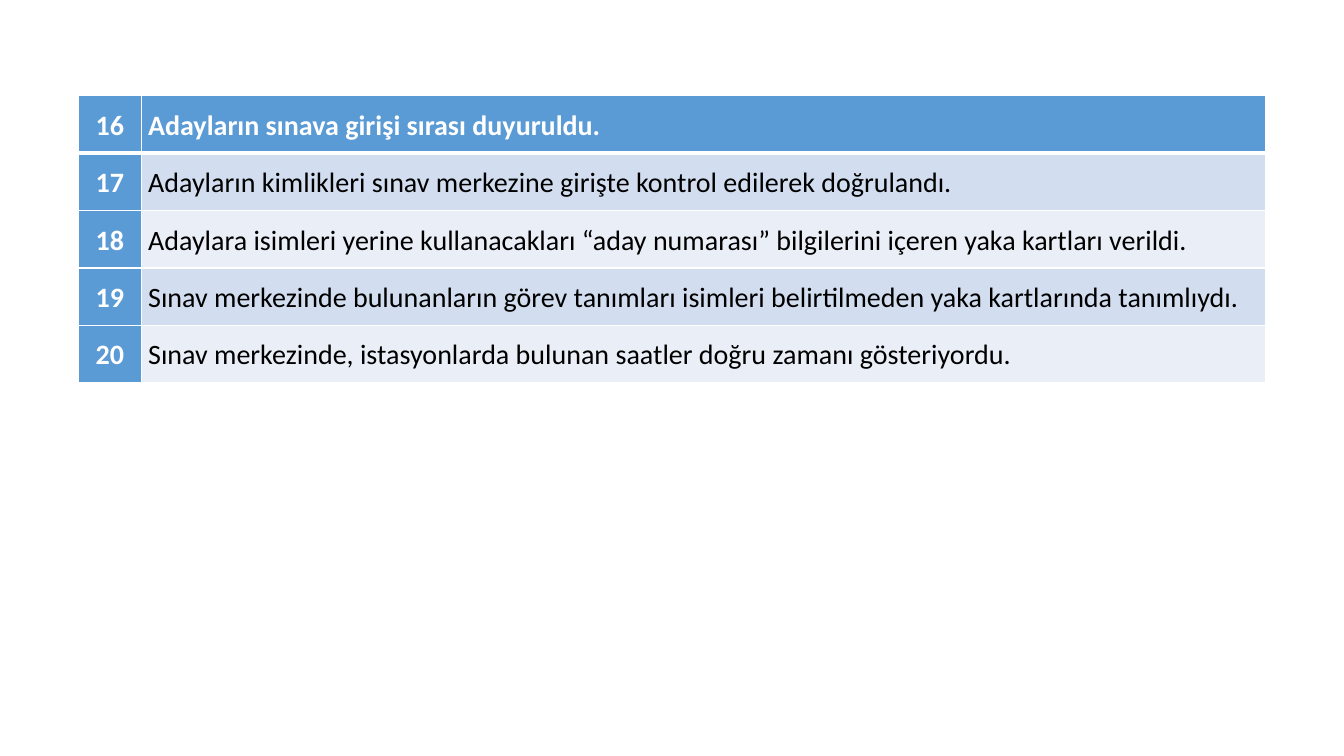
from dataclasses import dataclass

from lxml.etree import SubElement
from pptx import Presentation
from pptx.dml.color import RGBColor as Color
from pptx.enum.text import MSO_ANCHOR as Anchor, PP_ALIGN as Align
from pptx.oxml.ns import qn
from pptx.util import Inches, Pt


@dataclass(frozen=True)
class Theme:
    font: str = "Calibri"
    size: int = 20
    white: str = "FFFFFF"
    black: str = "000000"
    accent: str = "5B9BD5"
    bands: tuple = ("D2DEEF", "EAEFF7")
    border: int = 1
    header_border: int = 3


FIRST_NUMBER = 16
CHECKLIST = [
    "Adayların sınava girişi sırası duyuruldu.",
    "Adayların kimlikleri sınav merkezine girişte kontrol edilerek doğrulandı.",
    "Adaylara isimleri yerine kullanacakları “aday numarası” bilgilerini içeren yaka kartları verildi.",
    "Sınav merkezinde bulunanların görev tanımları isimleri belirtilmeden yaka kartlarında tanımlıydı.",
    "Sınav merkezinde, istasyonlarda bulunan saatler doğru zamanı gösteriyordu.",
]


class SlideBuilder:
    def __init__(self, slide, theme):
        self.slide = slide
        self.theme = theme

    def border(self, cell, side, width):
        line = SubElement(cell._tc.get_or_add_tcPr(), qn(f"a:ln{side}"), w=str(Pt(width)))
        fill = SubElement(line, qn("a:solidFill"))
        SubElement(fill, qn("a:srgbClr"), val=self.theme.white)

    def cell(self, cell, text, fill, color, bold, align, top, bottom):
        theme = self.theme
        widths = {"L": theme.border, "R": theme.border, "T": top, "B": bottom}
        for side, width in widths.items():
            self.border(cell, side, width)
        cell.fill.solid()
        cell.fill.fore_color.rgb = Color.from_string(fill)
        cell.vertical_anchor = Anchor.MIDDLE
        cell.margin_left = cell.margin_right = Inches(0.07)
        cell.margin_top = cell.margin_bottom = 0
        cell.text = text
        paragraph = cell.text_frame.paragraphs[0]
        paragraph.alignment = align
        paragraph.line_spacing = 1.07
        paragraph.space_after = Pt(8)
        font = paragraph.font
        font.name = theme.font
        font.size = Pt(theme.size)
        font.bold = bold
        font.color.rgb = Color.from_string(color)

    def numbered_table(self, items, first, left, top, column_widths, row_height):
        theme = self.theme
        table = self.slide.shapes.add_table(
            len(items), len(column_widths), Inches(left), Inches(top),
            Inches(sum(column_widths)), Inches(row_height * len(items)),
        ).table
        table.horz_banding = False
        table.first_col = True
        for column, width in zip(table.columns, column_widths):
            column.width = Inches(width)
        for index, item in enumerate(items):
            table.rows[index].height = Inches(row_height)
            header = index == 0
            upper = theme.header_border if index == 1 else theme.border
            lower = theme.header_border if header else theme.border
            fill = theme.accent if header else theme.bands[(index - 1) % 2]
            color = theme.white if header else theme.black
            self.cell(table.cell(index, 0), str(first + index), theme.accent,
                      theme.white, True, Align.CENTER, upper, lower)
            self.cell(table.cell(index, 1), item, fill, color, header,
                      Align.LEFT, upper, lower)


def main():
    presentation = Presentation()
    presentation.slide_width = Inches(13.33)
    presentation.slide_height = Inches(7.5)
    slide = presentation.slides.add_slide(presentation.slide_layouts[6])
    builder = SlideBuilder(slide, Theme())
    builder.numbered_table(CHECKLIST, FIRST_NUMBER, 0.78, 0.95, (0.62, 11.15), 0.57)
    presentation.save("out.pptx")


if __name__ == "__main__":
    main()
